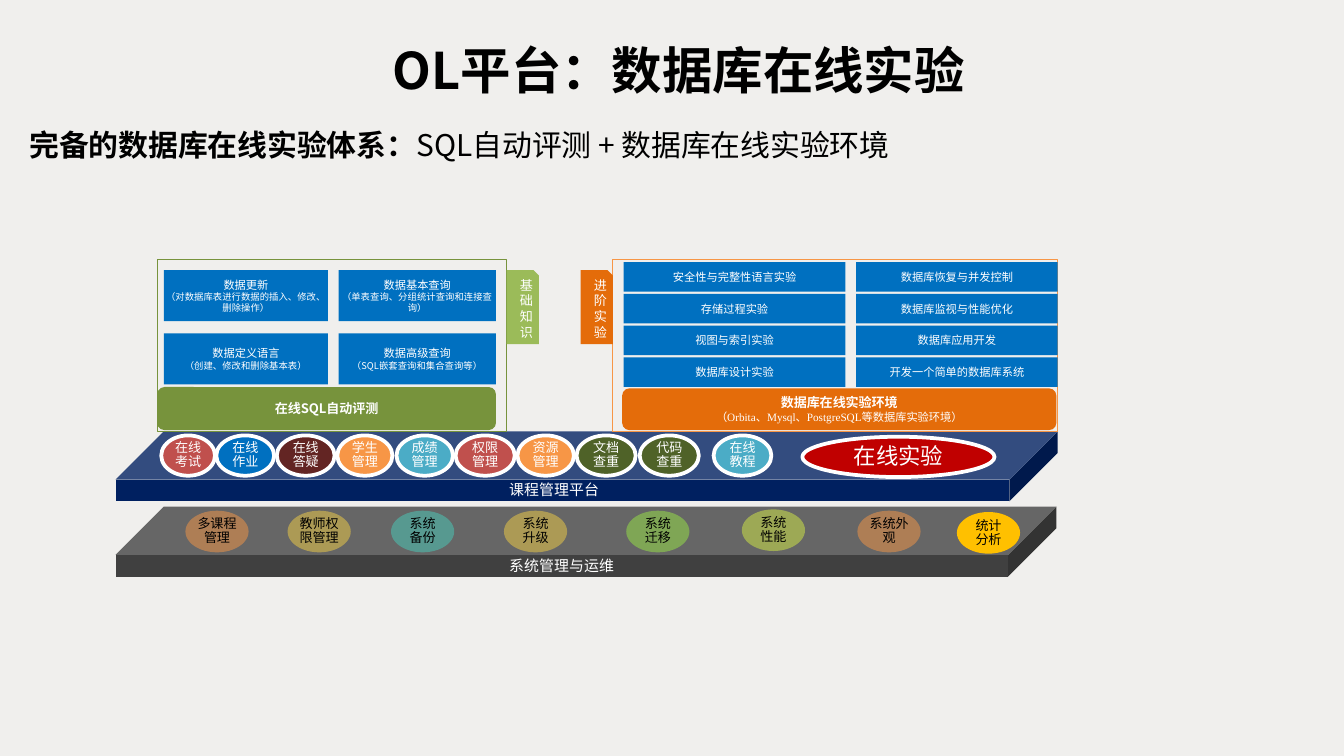
import pptx
import pptx.util
from lxml import etree
from pptx.dml.color import RGBColor
from pptx.enum.shapes import MSO_SHAPE
from pptx.enum.text import MSO_ANCHOR, PP_ALIGN
from pptx.oxml.ns import qn
from pptx.util import Inches

FONT = "Noto Sans CJK SC"
SERIF = "Times New Roman"
COLORS = {
    "back": "F0EFED", "black": "000000", "white": "FFFFFF", "navy": "002060",
    "gray": "404040", "blue": "0070C0", "red": "C0504D", "maroon": "632523",
    "orange": "F79646", "teal": "4BACC6", "forest": "4F6228", "crimson": "C00000",
    "gold": "FFC000", "rust": "E46C0A", "olive": "77933C", "leaf": "9BBB59",
    "mint": "49CDBB", "yellow": "F2CF46", "lime": "98E746", "citron": "D5EC46",
}


def rgb(name):
    return RGBColor.from_string(COLORS[name])


def write(sp, lines, color, insets=(0, 0.05, 0, 0.05), align=PP_ALIGN.CENTER,
          anchor=MSO_ANCHOR.MIDDLE, spacing=None):
    """Each line is a list of runs: (text, size, bold, latin font)."""
    tf = sp.text_frame
    tf.word_wrap = True
    tf.vertical_anchor = anchor
    tf.margin_left, tf.margin_top, tf.margin_right, tf.margin_bottom = map(Inches, insets)
    for i, line in enumerate(lines):
        p = tf.add_paragraph() if i else tf.paragraphs[0]
        p.alignment = align
        if spacing:
            p.line_spacing = spacing
        for text, size, bold, font in line:
            for j, part in enumerate(text.split("\n")):
                if j:
                    p.add_line_break()
                r = p.add_run()
                r.text = part
                r.font.size = pptx.util.Pt(size)
                r.font.bold = bold
                r.font.name = font
                r.font.color.rgb = rgb(color)
                ea = etree.SubElement(r.font._element, qn("a:ea"))
                ea.set("typeface", FONT)


def run(text, size, bold=False, font=FONT):
    return (text, size, bold, font)


def add_text(s, box, lines, color, **style):
    write(s.shapes.add_textbox(*map(Inches, box)), lines, color, **style)


def add_shape(s, kind, box, fill=None, line=None, width=0.5, alpha=None):
    sp = s.shapes.add_shape(kind, *map(Inches, box))
    sp.shadow.inherit = False
    if fill:
        sp.fill.solid()
        sp.fill.fore_color.rgb = rgb(fill)
        if alpha:
            clr = sp._element.spPr.find(qn("a:solidFill"))[0]
            etree.SubElement(clr, qn("a:alpha")).set("val", str(alpha * 1000))
    else:
        sp.fill.background()
    if line:
        sp.line.color.rgb = rgb(line)
        sp.line.width = pptx.util.Pt(width)
    else:
        sp.line.fill.background()
    return sp


def add_header(s, box):
    x, y, w, h = box
    add_text(s, (x + 0.62, y, 8.62, 1.09), [[run("OL平台：数据库在线实验", 27, True)]],
             "black", insets=(0.07, 0.04, 0.07, 0.04), spacing=0.9)
    add_text(s, (x, y + 0.92, w, h - 0.92),
             [[run("完备的数据库在线实验体系：", 16, True),
               run("SQL自动评测 + 数据库在线实验环境", 16)]],
             "black", insets=(0.1, 0.05, 0.1, 0.05), align=PP_ALIGN.LEFT,
             anchor=MSO_ANCHOR.TOP, spacing=0.9)


def add_layer(s, box, fill, label, badges, color, pad, size=(0.22, 0.31), **look):
    """Slab with a front label and a row of oval badges on its top face."""
    x, y, w, h = box
    slab = add_shape(s, MSO_SHAPE.CUBE, box, fill)
    slab.adjustments[0] = 0.69
    add_text(s, (x + 2.83, y + 0.37, 1.39, 0.13), [[run(label, 8)]], "white",
             insets=(0.1, 0, 0.1, 0), align=PP_ALIGN.LEFT, anchor=MSO_ANCHOR.TOP)
    label_h, badge_h = size
    for text, dx, dy, badge_w, label_w, badge_fill, pt in badges:
        style = {} if badge_fill == "gold" else look
        add_shape(s, MSO_SHAPE.OVAL, (x + dx, y + dy, badge_w, badge_h), badge_fill, **style)
        add_text(s, (x + dx + (badge_w - label_w) / 2, y + dy + (badge_h - label_h) / 2,
                     label_w, label_h),
                 [[run(text, pt)]], color, insets=(pad,) * 4, spacing=0.9)


def add_panel(s, box, frame, cards, cols, first, pitch, card_h, bar, bar_fill, bar_lines,
              tab_dx, tab_fill, tab_text):
    """Framed grid of cards with a base bar and a side tab."""
    x, y, w, h = box
    bx, by, bw, bh = bar
    sp = add_shape(s, MSO_SHAPE.ROUNDED_RECTANGLE, (x + bx, y + by, bw, bh), bar_fill)
    write(sp, bar_lines, "white")
    add_shape(s, MSO_SHAPE.RECTANGLE, box, line=frame)
    for row, names in enumerate(cards):
        for (dx, card_w), (title, *notes) in zip(cols, names):
            sp = add_shape(s, MSO_SHAPE.RECTANGLE,
                           (x + dx, y + first + row * pitch, card_w, card_h), "blue")
            write(sp, [[run(title, 6)]] + [[run(note, 5)] for note in notes], "white")
    tab = add_shape(s, MSO_SHAPE.SNIP_1_RECTANGLE, (x + tab_dx, y + 0.08, 0.24, 0.55), tab_fill)
    write(tab, [[run(tab_text, 7)]], "white", insets=(0.1, 0.05, 0.1, 0.05))


# Badges: text, left, top, width, label width, fill, text size
COURSE = [
    ("在线考试", 0.34, 0.03, 0.40, 0.28, "red", 7),
    ("在线作业", 0.75, 0.03, 0.43, 0.31, "blue", 7),
    ("在线答疑", 1.20, 0.03, 0.43, 0.30, "maroon", 7),
    ("学生\n管理", 1.65, 0.03, 0.41, 0.33, "orange", 7),
    ("成绩管理", 2.09, 0.03, 0.42, 0.30, "teal", 7),
    ("权限管理", 2.53, 0.03, 0.44, 0.31, "red", 7),
    ("资源管理", 2.99, 0.03, 0.42, 0.29, "orange", 7),
    ("文档查重", 3.43, 0.03, 0.44, 0.31, "forest", 7),
    ("代码查重", 3.90, 0.03, 0.44, 0.31, "forest", 7),
    ("在线教程", 4.45, 0.03, 0.43, 0.30, "teal", 7),
    ("在线实验", 5.11, 0.04, 1.43, 1.01, "crimson", 12),
]
SYSTEM = [
    ("多课程管理", 0.52, 0.03, 0.47, 0.33, "orange", 7),
    ("教师权限管理", 1.28, 0.03, 0.47, 0.33, "yellow", 7),
    ("系统备份", 2.05, 0.03, 0.47, 0.30, "mint", 7),
    ("系统升级", 2.89, 0.03, 0.47, 0.27, "yellow", 7),
    ("系统迁移", 3.80, 0.03, 0.47, 0.30, "lime", 7),
    ("系统性能", 4.66, 0.02, 0.47, 0.27, "citron", 7),
    ("系统外观", 5.52, 0.03, 0.47, 0.32, "orange", 7),
    ("统计分析", 6.26, 0.04, 0.47, 0.29, "gold", 7),
]
BASIC = [
    [("数据更新", "（对数据库表进行数据的插入、修改、删除操作）"),
     ("数据基本查询", "（单表查询、分组统计查询和连接查询）")],
    [("数据定义语言", "（创建、修改和删除基本表）"),
     ("数据高级查询", "（SQL嵌套查询和集合查询等）")],
]
ADVANCED = [
    [("安全性与完整性语言实验",), ("数据库恢复与并发控制",)],
    [("存储过程实验",), ("数据库监视与性能优化",)],
    [("视图与索引实验",), ("数据库应用开发",)],
    [("数据库设计实验",), ("开发一个简单的数据库系统",)],
]


def main():
    prs = pptx.Presentation()
    prs.slide_width, prs.slide_height = Inches(10), Inches(10 * 9 / 16)
    s = prs.slides.add_slide(prs.slide_layouts[6])
    s.background.fill.solid()
    s.background.fill.fore_color.rgb = rgb("back")

    add_header(s, (0.12, 0, 9.86, 4.63))

    # Platform layers
    add_layer(s, (0.86, 3.21, 7.01, 0.52), "navy", "课程管理平台", COURSE, "white", 0.02,
              size=(0.21, 0.3), line="white", width=2)
    add_layer(s, (0.86, 3.77, 7, 0.52), "gray", "系统管理与运维", SYSTEM, "black", 0.01,
              alpha=50)

    # Experiment panels
    add_panel(s, (1.17, 1.93, 2.6, 1.28), "olive", BASIC, [(0.05, 1.22), (1.35, 1.17)],
              0.08, 0.47, 0.38, (0, 0.95, 2.52, 0.32), "olive",
              [[run("在线SQL自动评测", 7, True)]], 2.6, "leaf", "基础知识")
    add_panel(s, (4.56, 1.93, 3.31, 1.28), "orange", ADVANCED, [(0.08, 1.65), (1.81, 1.5)],
              0.02, 0.71 / 3, 0.22, (0.07, 0.96, 3.23, 0.31), "rust",
              [[run("数据库在线实验环境", 7, True)],
               [run("（", 6), run("Orbita、Mysql、PostgreSQL", 6, font=SERIF),
                run("等数据库实验环境）", 6)]], -0.24, "rust", "进阶实验")

    prs.save("out.pptx")


if __name__ == "__main__":
    main()
